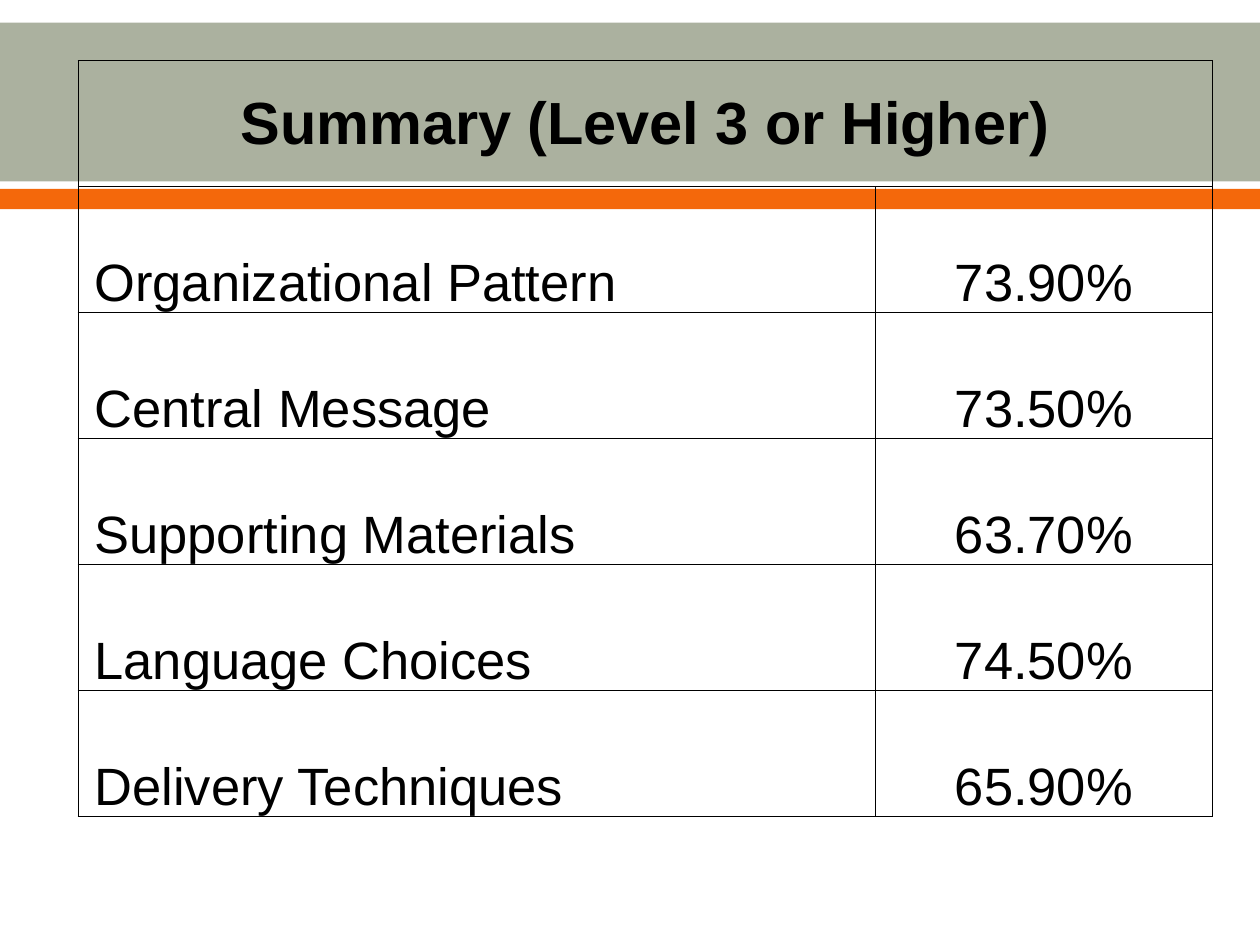
import pptx
import pptx.dml.color
import pptx.enum.shapes
import pptx.enum.text
import pptx.oxml
import pptx.oxml.ns
import pptx.util

Inches = pptx.util.Inches
Pt = pptx.util.Pt
RGBColor = pptx.dml.color.RGBColor
Align = pptx.enum.text.PP_ALIGN
Anchor = pptx.enum.text.MSO_ANCHOR

SAGE = RGBColor(0xAB, 0xB1, 0x9F)
ORANGE = RGBColor(0xF4, 0x68, 0x0B)
BLACK = RGBColor(0, 0, 0)

TITLE = "Summary (Level 3 or Higher)"
SCORES = [
    ("Organizational Pattern", "73.90%"),
    ("Central Message", "73.50%"),
    ("Supporting Materials", "63.70%"),
    ("Language Choices", "74.50%"),
    ("Delivery Techniques", "65.90%"),
]


class Deck:
    """Holds the text style and the current slide."""

    font = "Arial"
    inset = 0.01
    indent = 0.13
    border = Pt(0.5)

    def __init__(self, slide):
        self.slide = slide

    def band(self, top, height, color):
        shape = self.slide.shapes.add_shape(
            pptx.enum.shapes.MSO_SHAPE.RECTANGLE,
            0, Inches(top), Inches(10), Inches(height))
        shape.shadow.inherit = False
        shape.fill.solid()
        shape.fill.fore_color.rgb = color
        shape.line.fill.background()

    def table(self, left, top, widths, rows, height):
        frame = self.slide.shapes.add_table(
            rows, len(widths), Inches(left), Inches(top),
            Inches(sum(widths)), Inches(rows * height))
        table = frame.table
        table.first_row = table.horz_banding = False
        for col, width in zip(table.columns, widths):
            col.width = Inches(width)
        for row in table.rows:
            row.height = Inches(height)
        for cell in table.iter_cells():
            self.outline(cell)
            cell.fill.background()
        return table

    def outline(self, cell):
        props = cell._tc.get_or_add_tcPr()
        for side in "LRTB":
            props.append(pptx.oxml.parse_xml(
                f'<a:ln{side} {pptx.oxml.ns.nsdecls("a")} w="{self.border}">'
                f'<a:solidFill><a:srgbClr val="{BLACK}"/></a:solidFill>'
                f'</a:ln{side}>'))

    def label(self, cell, text, size=30, bold=False,
              align=Align.CENTER, anchor=Anchor.BOTTOM):
        left = self.indent if align == Align.LEFT else self.inset
        cell.margin_left = Inches(left)
        cell.margin_right = cell.margin_top = Inches(self.inset)
        cell.margin_bottom = 0
        cell.vertical_anchor = anchor
        cell.text_frame.text = text
        para = cell.text_frame.paragraphs[0]
        para.alignment = align
        font = para.runs[0].font
        font.name = self.font
        font.size = Pt(size)
        font.bold = bold
        font.color.rgb = BLACK


def main():
    prs = pptx.Presentation()
    prs.slide_width = Inches(10)
    prs.slide_height = Inches(7.5)
    deck = Deck(prs.slides.add_slide(prs.slide_layouts[6]))

    deck.band(0.18, 1.26, SAGE)
    deck.band(1.5, 0.16, ORANGE)

    table = deck.table(0.62, 0.48, (6.33, 2.67), len(SCORES) + 1, 1)
    head = table.cell(0, 0)
    head.merge(table.cell(0, 1))
    deck.label(head, TITLE, size=34, bold=True, anchor=Anchor.MIDDLE)
    for row, (skill, score) in enumerate(SCORES, 1):
        deck.label(table.cell(row, 0), skill, align=Align.LEFT)
        deck.label(table.cell(row, 1), score)

    prs.save("out.pptx")


if __name__ == "__main__":
    main()
